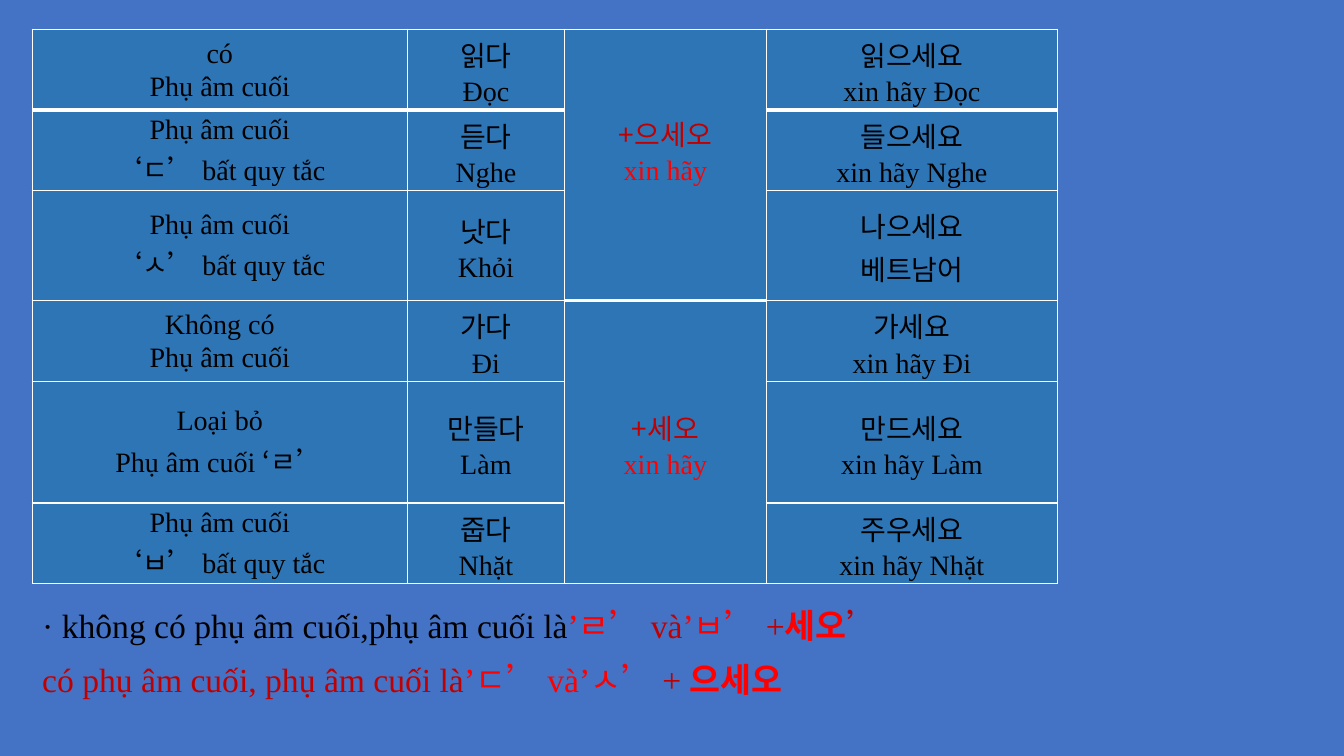
"""Build a slide on Korean polite request endings with Vietnamese glosses."""
from lxml import etree
from pptx import Presentation
from pptx import util as u
from pptx.dml.color import RGBColor
from pptx.enum import text
from pptx.oxml import ns

LATIN, KOREAN = "Times New Roman", "Noto Sans CJK KR"
BLACK, RED, DARK_RED, WHITE = "000000", "FF0000", "C00000", "FFFFFF"
BACKGROUND, CELL_BLUE = "4472C4", "2E75B6"


def color(value):
    return RGBColor.from_string(value)


def apply(target, values):
    for name, value in values.items():
        setattr(target, name, value)


def latin(words, shade=BLACK, **extra):
    return words, shade, {"name": LATIN, **extra}


def korean(words, shade=BLACK):
    return words, shade, {"name": KOREAN}


def pair(word, meaning):
    return [[korean(word)], [latin(meaning)]]


def irregular(letter):
    return [[latin("Phụ âm cuối")], [korean(f"‘{letter}’ "), latin("bất quy tắc")]]


def ending(suffix):
    return [[korean(suffix, DARK_RED)], [latin("xin hãy", RED)]]


class SlideBuilder:
    cell_format = {
        "margin_left": u.Inches(0.07), "margin_right": u.Inches(0.07),
        "margin_top": 0, "margin_bottom": 0,
        "vertical_anchor": text.MSO_ANCHOR.MIDDLE,
    }
    cell_paragraph = {"alignment": text.PP_ALIGN.CENTER, "line_spacing": 1.07}
    note_paragraph = {"line_spacing": 1.07, "space_after": u.Pt(8)}

    def __init__(self, presentation):
        self.slide = presentation.slides.add_slide(presentation.slide_layouts[6])
        fill = self.slide.background.fill
        fill.solid()
        fill.fore_color.rgb = color(BACKGROUND)

    def add_lines(self, frame, lines, size, paragraph_format):
        for index, runs in enumerate(lines):
            paragraph = frame.add_paragraph() if index else frame.paragraphs[0]
            apply(paragraph, paragraph_format)
            for words, shade, font_format in runs:
                run = paragraph.add_run()
                run.text = words
                apply(run.font, {"size": u.Pt(size), **font_format})
                run.font.color.rgb = color(shade)
                east_asian = etree.SubElement(run.font._element, ns.qn("a:ea"))
                east_asian.set("typeface", KOREAN)

    def border(self, cell, side, points):
        properties = cell._tc.get_or_add_tcPr()
        line = etree.SubElement(properties, ns.qn(f"a:ln{side}"), w=str(u.Pt(points)))
        fill = etree.SubElement(line, ns.qn("a:solidFill"))
        etree.SubElement(fill, ns.qn("a:srgbClr"), val=WHITE)

    def table(self, left, top, widths, heights, contents, merges, thick):
        shape = self.slide.shapes.add_table(
            len(heights), len(widths), u.Inches(left), u.Inches(top),
            u.Inches(sum(widths)), u.Inches(sum(heights)))
        table = shape.table
        for column, width in zip(table.columns, widths):
            column.width = u.Inches(width)
        for row, height in zip(table.rows, heights):
            row.height = u.Inches(height)
        for first, last in merges:
            table.cell(*first).merge(table.cell(*last))
        for row in range(len(heights)):
            for column in range(len(widths)):
                cell = table.cell(row, column)
                apply(cell, self.cell_format)
                above = 3 if (row - 1, column) in thick else 1
                below = 3 if (row, column) in thick else 1
                for side, points in zip("LRTB", (1, 1, above, below)):
                    self.border(cell, side, points)
                cell.fill.solid()
                cell.fill.fore_color.rgb = color(CELL_BLUE)
                if contents[row][column]:
                    self.add_lines(cell.text_frame, contents[row][column], 20,
                                   self.cell_paragraph)
        return table

    def note(self, left, top, width, height, lines):
        shape = self.slide.shapes.add_textbox(*map(u.Inches, (left, top, width, height)))
        apply(shape.text_frame, {"word_wrap": True,
                                 "auto_size": text.MSO_AUTO_SIZE.SHAPE_TO_FIT_TEXT})
        self.add_lines(shape.text_frame, lines, 24, self.note_paragraph)


def main():
    presentation = Presentation()
    apply(presentation, {"slide_width": u.Inches(13.33), "slide_height": u.Inches(7.5)})
    builder = SlideBuilder(presentation)

    contents = [
        [[[latin("có")], [latin("Phụ âm cuối")]], pair("읽다", "Đọc"),
         ending("+으세오"), pair("읽으세요", "xin hãy Đọc")],
        [irregular("ㄷ"), pair("듣다", "Nghe"), None, pair("들으세요", "xin hãy Nghe")],
        [irregular("ㅅ"), pair("낫다", "Khỏi"), None, pair("나으세요", "베트남어")],
        [[[latin("Không có")], [latin("Phụ âm cuối")]], pair("가다", "Đi"),
         ending("+세오"), pair("가세요", "xin hãy Đi")],
        [[[latin("Loại bỏ")], [latin("Phụ âm cuối "), korean("‘ㄹ’")]],
         pair("만들다", "Làm"), None, pair("만드세요", "xin hãy Làm")],
        [irregular("ㅂ"), pair("줍다", "Nhặt"), None, pair("주우세요", "xin hãy Nhặt")],
    ]
    table = builder.table(
        0.32, 0.29, [3.72, 1.56, 2, 2.89], [0.8, 0.8, 1.09, 0.8, 1.21, 0.8], contents,
        merges=[((0, 2), (2, 2)), ((3, 2), (5, 2))],
        thick={(0, 0), (0, 1), (0, 2), (0, 3), (2, 2)})
    table.cell(0, 2).margin_bottom = u.Inches(0.33)

    builder.note(0.32, 5.92, 9.42, 1.04, [
        [latin("· không có phụ âm cuối,phụ âm cuối là"), latin("’ㄹ’ ", RED),
         latin("và", DARK_RED), latin("’ㅂ’ ", RED), latin("+", DARK_RED),
         latin("세오", RED, bold=True), latin("’", DARK_RED)],
        [latin("có phụ âm cuối, phụ âm cuối là", DARK_RED), latin("’ㄷ’ và’ㅅ’ ", RED),
         latin("+ ", DARK_RED), latin("으세오", RED, bold=True)],
    ])
    presentation.save("out.pptx")


if __name__ == "__main__":
    main()
